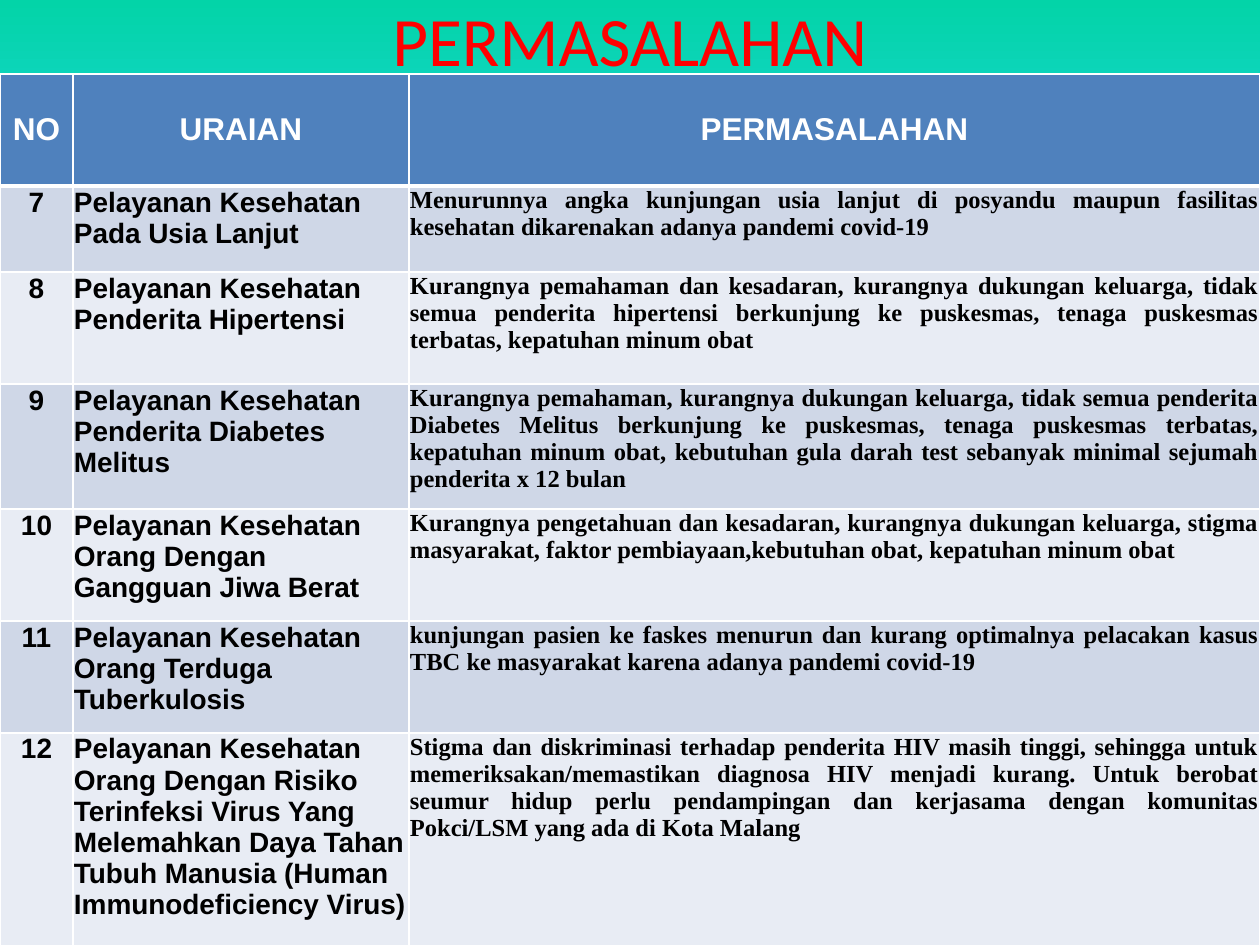
"""Builds the PERMASALAHAN slide: a title above a three-column table of health services."""
from lxml import etree
from pptx import Presentation
from pptx import util as u
from pptx.dml.color import RGBColor
from pptx.enum import text
from pptx.oxml.ns import qn

PX = 914400 // 126
ALIGN = {"l": text.PP_ALIGN.LEFT, "c": text.PP_ALIGN.CENTER, "j": text.PP_ALIGN.JUSTIFY}
GRADIENT = [(0, "03D4A8"), (25, "21D6E0"), (75, "0087E6"), (100, "005CBF")]
COLUMNS = [73, 336, 851]
ROW_HEIGHTS = [112, 86, 112, 125, 112, 112, 213]
HEADER = ["NO", "URAIAN", "PERMASALAHAN"]
SERVICES = [
    ("Pada Usia Lanjut",
     "Menurunnya angka kunjungan usia lanjut di posyandu maupun fasilitas kesehatan "
     "dikarenakan adanya pandemi covid-19"),
    ("Penderita Hipertensi",
     "Kurangnya pemahaman dan kesadaran, kurangnya dukungan keluarga, tidak semua "
     "penderita hipertensi berkunjung ke puskesmas, tenaga puskesmas terbatas, "
     "kepatuhan minum obat"),
    ("Penderita Diabetes Melitus",
     "Kurangnya pemahaman, kurangnya dukungan keluarga, tidak semua penderita Diabetes "
     "Melitus berkunjung ke puskesmas, tenaga puskesmas terbatas, kepatuhan minum obat, "
     "kebutuhan gula darah test sebanyak minimal sejumah penderita x 12 bulan"),
    ("Orang Dengan Gangguan Jiwa Berat",
     "Kurangnya pengetahuan dan kesadaran, kurangnya dukungan keluarga, stigma "
     "masyarakat, faktor pembiayaan,kebutuhan obat, kepatuhan minum obat"),
    ("Orang Terduga Tuberkulosis",
     "kunjungan pasien ke faskes menurun dan kurang optimalnya pelacakan kasus TBC ke "
     "masyarakat karena adanya pandemi covid-19"),
    ("Orang Dengan Risiko Terinfeksi Virus Yang Melemahkan Daya Tahan Tubuh Manusia "
     "(Human Immunodeficiency Virus)",
     "Stigma dan diskriminasi terhadap penderita HIV masih tinggi, sehingga untuk "
     "memeriksakan/memastikan diagnosa HIV menjadi kurang. Untuk berobat seumur hidup "
     "perlu pendampingan dan kerjasama dengan komunitas Pokci/LSM yang ada di Kota Malang"),
]


def px(n):
    return u.Emu(n * PX)


def rgb(value):
    return RGBColor.from_string(value)


class Deck:
    def __init__(self):
        self.prs = Presentation()
        self.prs.slide_width, self.prs.slide_height = px(1260), px(945)
        self.s = self.prs.slides.add_slide(self.prs.slide_layouts[5])

    def background(self, stops):
        fill = self.s.background.fill
        fill.gradient()
        fill.gradient_angle = 270
        gs_list = next(self.s.element.iter(qn("a:gsLst")))
        for gs in list(gs_list):
            gs_list.remove(gs)
        for percent, color in stops:
            gs = etree.SubElement(gs_list, qn("a:gs"), pos=str(percent * 1000))
            etree.SubElement(gs, qn("a:srgbClr"), val=color)

    def style_text(self, tf, words, size, font, color, align, bold=False):
        tf.text = words
        p = tf.paragraphs[0]
        p.alignment = ALIGN[align]
        r = p.runs[0].font
        r.size, r.name, r.bold = u.Pt(size), font, bold
        r.color.rgb = rgb(color)

    def title(self, words, x, y, w, h):
        sp = self.s.shapes.title
        sp.left, sp.top, sp.width, sp.height = map(px, (x, y, w, h))
        tf = sp.text_frame
        tf.auto_size = text.MSO_AUTO_SIZE.NONE
        tf.vertical_anchor = text.MSO_ANCHOR.MIDDLE
        self.style_text(tf, words, 39.6, "Calibri", "FF0000", "c")

    def table(self, x, y, widths, heights):
        frame = self.s.shapes.add_table(len(heights), len(widths), px(x), px(y),
                                        px(sum(widths)), px(sum(heights)))
        table = frame.table
        for column, w in zip(table.columns, widths):
            column.width = px(w)
        for row, h in zip(table.rows, heights):
            row.height = px(h)
        return table

    def borders(self, cell, top, bottom):
        tc_pr = cell._tc.get_or_add_tcPr()
        for i, (side, points) in enumerate(zip("LRTB", (1, 1, top, bottom))):
            ln = etree.Element(qn("a:ln" + side), w=str(int(u.Pt(points))))
            fill = etree.SubElement(ln, qn("a:solidFill"))
            etree.SubElement(fill, qn("a:srgbClr"), val="FFFFFF")
            tc_pr.insert(i, ln)

    def cell(self, cell, words, fill, size, font, color, align):
        cell.fill.solid()
        cell.fill.fore_color.rgb = rgb(fill)
        self.style_text(cell.text_frame, words, size, font, color, align, bold=True)

    def header_cell(self, cell, words):
        self.cell(cell, words, "4F81BD", 18, "Arial", "FFFFFF", "c")
        cell.vertical_anchor = text.MSO_ANCHOR.MIDDLE
        self.borders(cell, 1, 3)

    def body_cell(self, cell, words, row, size, font, align):
        fill = "CFD7E7" if row % 2 else "E8ECF4"
        self.cell(cell, words, fill, size, font, "000000", align)
        cell.margin_left = cell.margin_right = cell.margin_top = px(1)
        cell.margin_bottom = 0
        self.borders(cell, 3 if row == 1 else 1, 1)


def main():
    deck = Deck()
    deck.background(GRADIENT)
    deck.title("PERMASALAHAN", 63, 0, 1134, 78)
    table = deck.table(0, 74, COLUMNS, ROW_HEIGHTS)
    for col, words in enumerate(HEADER):
        deck.header_cell(table.cell(0, col), words)
    styles = [(16, "Arial", "c"), (16, "Arial", "l"), (14, "Times New Roman", "j")]
    for row, (service, problem) in enumerate(SERVICES, 1):
        values = (str(row + 6), "Pelayanan Kesehatan " + service, problem)
        for col, (words, style) in enumerate(zip(values, styles)):
            deck.body_cell(table.cell(row, col), words, row, *style)
    deck.prs.save("out.pptx")


if __name__ == "__main__":
    main()
